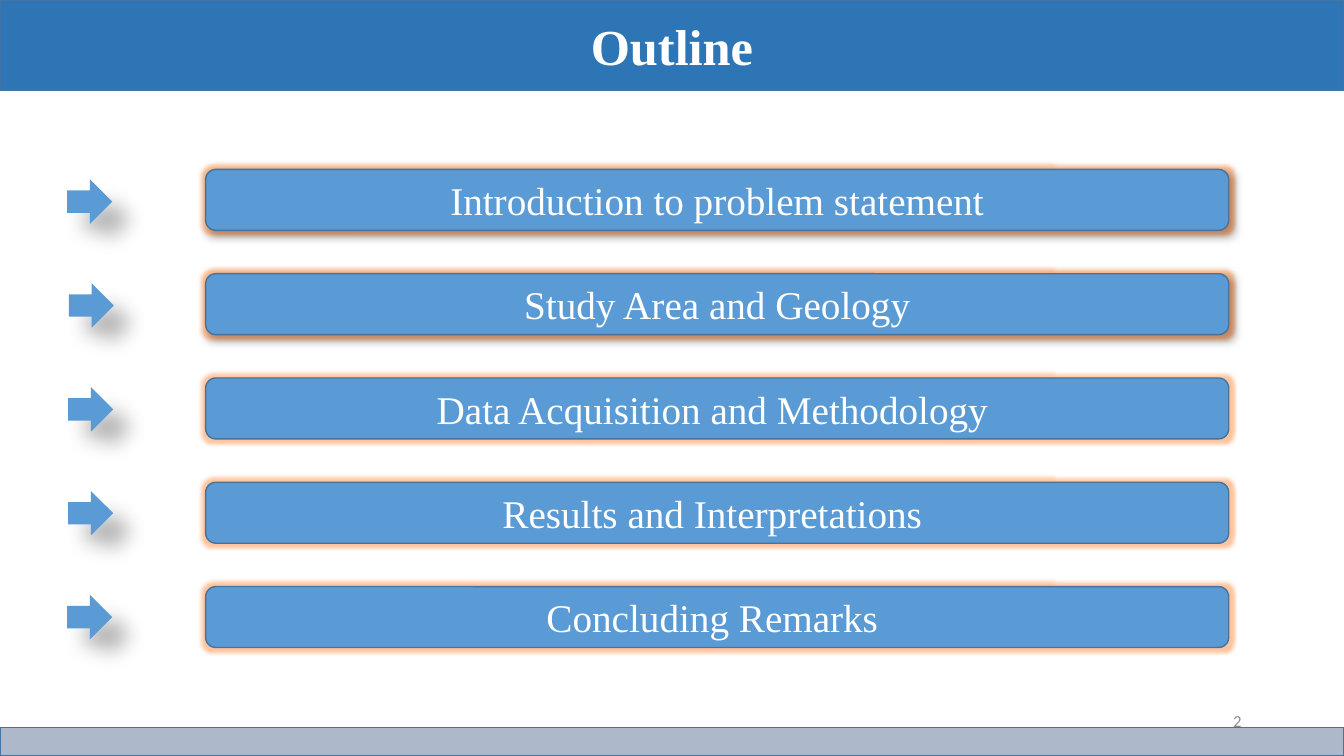
from lxml import etree
from pptx import Presentation, util as u
from pptx.dml.color import RGBColor
from pptx.enum import shapes, text
from pptx.oxml import ns

Pt = u.Pt
KIND = shapes.MSO_SHAPE
WHITE = RGBColor(0xFF, 0xFF, 0xFF)
GREY = RGBColor(0x8C, 0x8C, 0x8C)
EDGE = RGBColor(0x43, 0x73, 0x9E)
NAVY = RGBColor(0x2E, 0x75, 0xB6)
BLUE = RGBColor(0x5B, 0x9B, 0xD5)
MIST = RGBColor(0xAD, 0xB9, 0xCA)
BLACK = RGBColor(0, 0, 0)
GLOW = RGBColor(0xFF, 0x6B, 0x0A)
SERIF = "Times New Roman"


def draw(host, kind, box, fill, edge=EDGE, effects=()):
    """Add a filled shape; effects are (tag, alpha percent, colour, sizes)."""
    shape = host.add_shape(kind, *[Pt(n) for n in box])
    shape.shadow.inherit = False
    shape.fill.solid()
    shape.fill.fore_color.rgb = fill
    if edge is None:
        shape.line.fill.background()
    else:
        shape.line.color.rgb = edge
        shape.line.width = Pt(1)
    group = shape.element.spPr.find(ns.qn("a:effectLst"))
    for tag, alpha, tint, sizes in effects:
        node = etree.SubElement(group, ns.qn(tag), {k: str(v) for k, v in sizes.items()})
        hue = etree.SubElement(node, ns.qn("a:srgbClr"), val=str(tint))
        etree.SubElement(hue, ns.qn("a:alpha"), val=str(alpha * 1000))
    return shape


def write(shape, words, align, look):
    """Put one line of text, centred vertically, in a shape."""
    frame = shape.text_frame
    frame.word_wrap = True
    frame.vertical_anchor = text.MSO_ANCHOR.MIDDLE
    para = frame.paragraphs[0]
    para.alignment = align
    run = para.add_run()
    run.text = words
    for key, value in look.items():
        if key == "color":
            run.font.color.rgb = value
        else:
            setattr(run.font, key, value)


deck = Presentation()
deck.slide_width, deck.slide_height = Pt(960), Pt(540)
slide = deck.slides.add_slide(deck.slide_layouts[6])
mid = text.PP_ALIGN.CENTER

# Footer and title bands
draw(slide.shapes, KIND.RECTANGLE, (0, 519.6, 960, 20.4), MIST)
band = draw(slide.shapes, KIND.RECTANGLE, (0, 0, 960, 64.2), NAVY)
write(band, "Outline", mid,
      {"name": SERIF, "size": Pt(36), "bold": True, "color": WHITE})

# Outline rows: a glowing bar with an arrow beside it
angle = 45 * 60000
glow = ("a:glow", 40, GLOW, {"rad": Pt(5)})
near = ("a:outerShdw", 40, BLACK,
        {"blurRad": Pt(4), "dist": Pt(3), "dir": angle, "algn": "tl", "rotWithShape": 0})
far = ("a:outerShdw", 30, BLACK,
       {"blurRad": Pt(15), "dist": Pt(18), "dir": angle, "algn": "ctr", "rotWithShape": 0})
rows = [
    ("Introduction to problem statement", 48, [glow, near]),
    ("Study Area and Geology", 49.2, [glow, near]),
    ("Data Acquisition and Methodology ", 48.7, [glow]),
    ("Results and Interpretations ", 48.7, [glow]),
    ("Concluding Remarks ", 48, [glow]),
]
look = {"name": SERIF, "size": Pt(28), "color": WHITE}
for i, (words, left, effects) in enumerate(rows):
    row = slide.shapes.add_group_shape().shapes
    bar = draw(row, KIND.ROUNDED_RECTANGLE, (146.9, 121 + 74.5 * i, 730.8, 43.5),
               BLUE, effects=effects)
    write(bar, words, mid, look)
    draw(row, KIND.RIGHT_ARROW, (left, 128 + 74.2 * i, 32.2, 32), BLUE, None, [far])

# Slide number
page = slide.shapes.add_textbox(Pt(678), Pt(500.5), Pt(216), Pt(28.75))
write(page, "2", text.PP_ALIGN.RIGHT, {"name": "Calibri", "size": Pt(12), "color": GREY})

deck.save("out.pptx")
